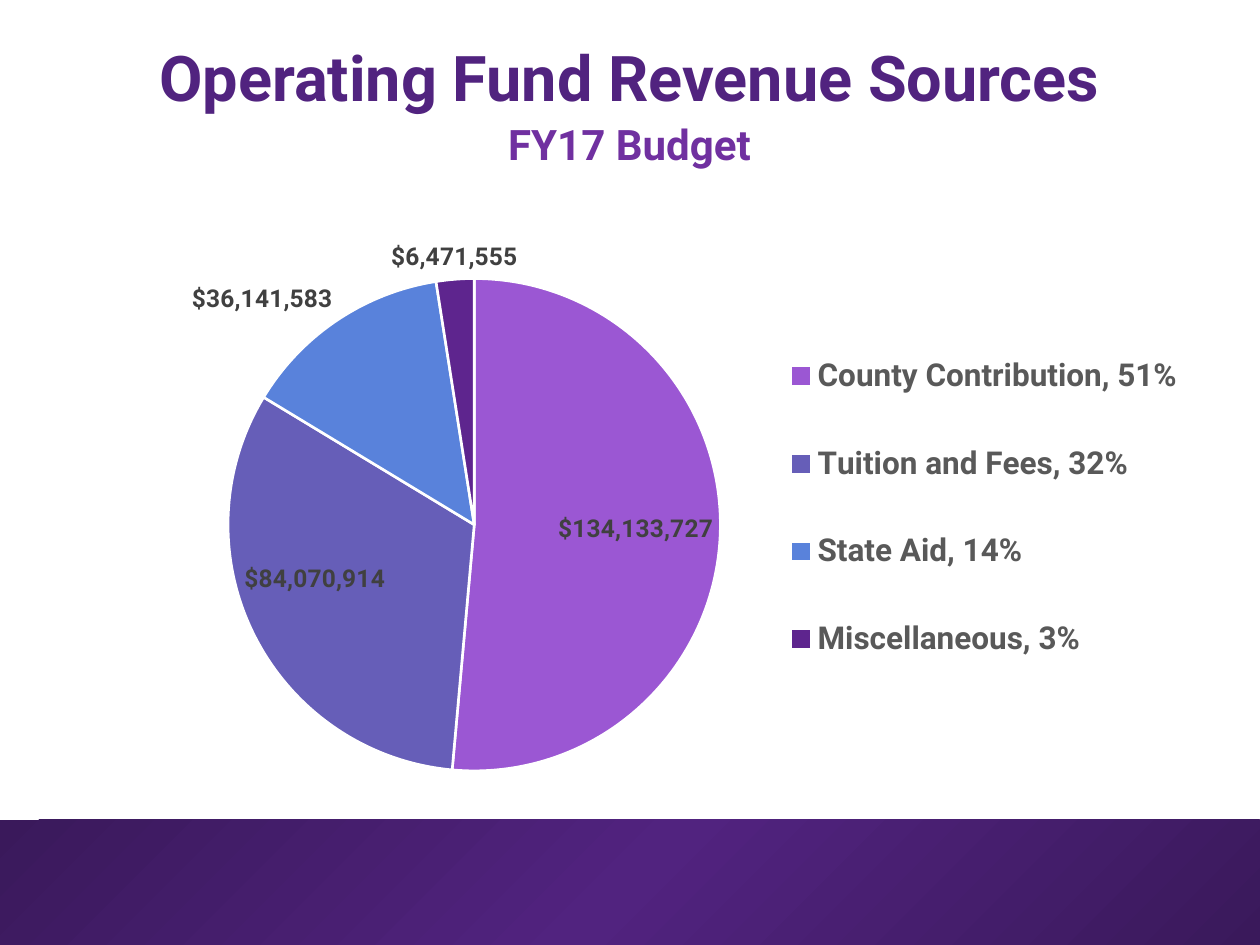
"""Build the slide on operating fund revenue sources for the FY17 budget."""
from lxml import etree
from pptx import Presentation
from pptx.chart.data import CategoryChartData
from pptx.dml.color import RGBColor
from pptx.enum.chart import XL_CHART_TYPE, XL_LABEL_POSITION, XL_LEGEND_POSITION
from pptx.enum.shapes import MSO_SHAPE
from pptx.enum.text import MSO_ANCHOR, PP_ALIGN
from pptx.oxml import parse_xml
from pptx.oxml.ns import qn
from pptx.util import Pt

PX = 914400 // 126
PIE = XL_CHART_TYPE.PIE
BEST = XL_LABEL_POSITION.BEST_FIT
RIGHT = XL_LEGEND_POSITION.RIGHT
RECT = MSO_SHAPE.RECTANGLE
TOP, BOTTOM = MSO_ANCHOR.TOP, MSO_ANCHOR.BOTTOM
CENTER = PP_ALIGN.CENTER
FONT = "Roboto"
WHITE = RGBColor(0xFF, 0xFF, 0xFF)
PURPLE = RGBColor(0x51, 0x23, 0x7F)
DARK = RGBColor(0x3A, 0x19, 0x5B)
VIOLET = RGBColor(0x70, 0x30, 0xA0)
GREY = RGBColor(0x59, 0x59, 0x59)
INK = RGBColor(0x40, 0x40, 0x40)
SOURCES = [
    ("County Contribution, 51%", 134133727, RGBColor(0x9B, 0x57, 0xD3)),
    ("Tuition and Fees, 32%", 84070914, RGBColor(0x66, 0x5E, 0xB8)),
    ("State Aid, 14%", 36141583, RGBColor(0x59, 0x82, 0xDB)),
    ("Miscellaneous, 3%", 6471555, RGBColor(0x5E, 0x25, 0x8E)),
]


def style(font, size, color):
    font.name, font.size, font.bold = FONT, Pt(size), True
    font.color.rgb = color


def layout(x, y, w, h, inner=False):
    node = etree.Element(qn("c:layout"))
    manual = etree.SubElement(node, qn("c:manualLayout"))
    parts = [("layoutTarget", "inner")] if inner else []
    parts += [("xMode", "edge"), ("yMode", "edge")]
    parts += [("x", x), ("y", y), ("w", w), ("h", h)]
    for tag, val in parts:
        etree.SubElement(manual, qn("c:" + tag)).set("val", str(val))
    return node


prs = Presentation()
prs.slide_width, prs.slide_height = 1260 * PX, 945 * PX
slide = prs.slides.add_slide(prs.slide_layouts[5])
shapes = slide.shapes

band = shapes.add_shape(RECT, 0, 820 * PX, 1260 * PX, 125 * PX)
band.shadow.inherit = False
band.line.fill.background()
band.fill.gradient()
band.fill.gradient_angle = 315
stops = band.fill.gradient_stops
for stop, color in zip(stops, (DARK, DARK)):
    stop.color.rgb = color
middle = parse_xml(
    '<a:gs xmlns:a="http://schemas.openxmlformats.org/drawingml/2006/main"'
    f' pos="50000"><a:srgbClr val="{PURPLE}"/></a:gs>'
)
band._element.spPr.find(".//" + qn("a:gsLst")).insert(1, middle)

title = shapes.title
title.left, title.top, title.width, title.height = (
    n * PX for n in (52, 42, 1155, 79)
)
sub = shapes.add_textbox(52 * PX, 118 * PX, 1155 * PX, 52 * PX)
for box, text, size, color, space, anchor in (
    (title, "Operating Fund Revenue Sources", 36, PURPLE, 0.85, BOTTOM),
    (sub, "FY17 Budget", 24, VIOLET, 0.9, TOP),
):
    frame = box.text_frame
    frame.word_wrap = True
    frame.vertical_anchor = anchor
    frame.text = text
    para = frame.paragraphs[0]
    para.alignment, para.line_spacing = CENTER, space
    style(para.font, size, color)

data = CategoryChartData(number_format='"$"#,##0')
data.categories = [name for name, _, _ in SOURCES]
data.add_series("Series 1", [value for _, value, _ in SOURCES])
chart = shapes.add_chart(
    PIE, 52 * PX, 222 * PX, 1173 * PX, 566 * PX, data
).chart
chart.has_title = False
chart.font.name, chart.font.size = FONT, Pt(10)
chart.has_legend = True
legend = chart.legend
legend.position, legend.include_in_layout = RIGHT, False
style(legend.font, 18, GREY)
legend._element.find(qn("c:legendPos")).addnext(layout(0.61, 0.15, 0.37, 0.71))

area = chart._chartSpace.chart.plotArea
for old in area.findall(qn("c:layout")):
    area.remove(old)
area.insert(0, layout(0.15, 0.1, 0.42, 0.87, True))

plot = chart.plots[0]
plot.vary_by_categories = True
series = plot.series[0]
for i, (_, _, color) in enumerate(SOURCES):
    form = series.points[i].format
    form.fill.solid()
    form.fill.fore_color.rgb = color
    form.line.color.rgb = WHITE
    form.line.width = Pt(1.5)
labels = series.data_labels
labels.show_value = True
labels.show_percentage = False
labels.number_format, labels.number_format_is_linked = '"$"#,##0', False
labels.position = BEST
style(labels.font, 14, INK)

prs.save("out.pptx")
